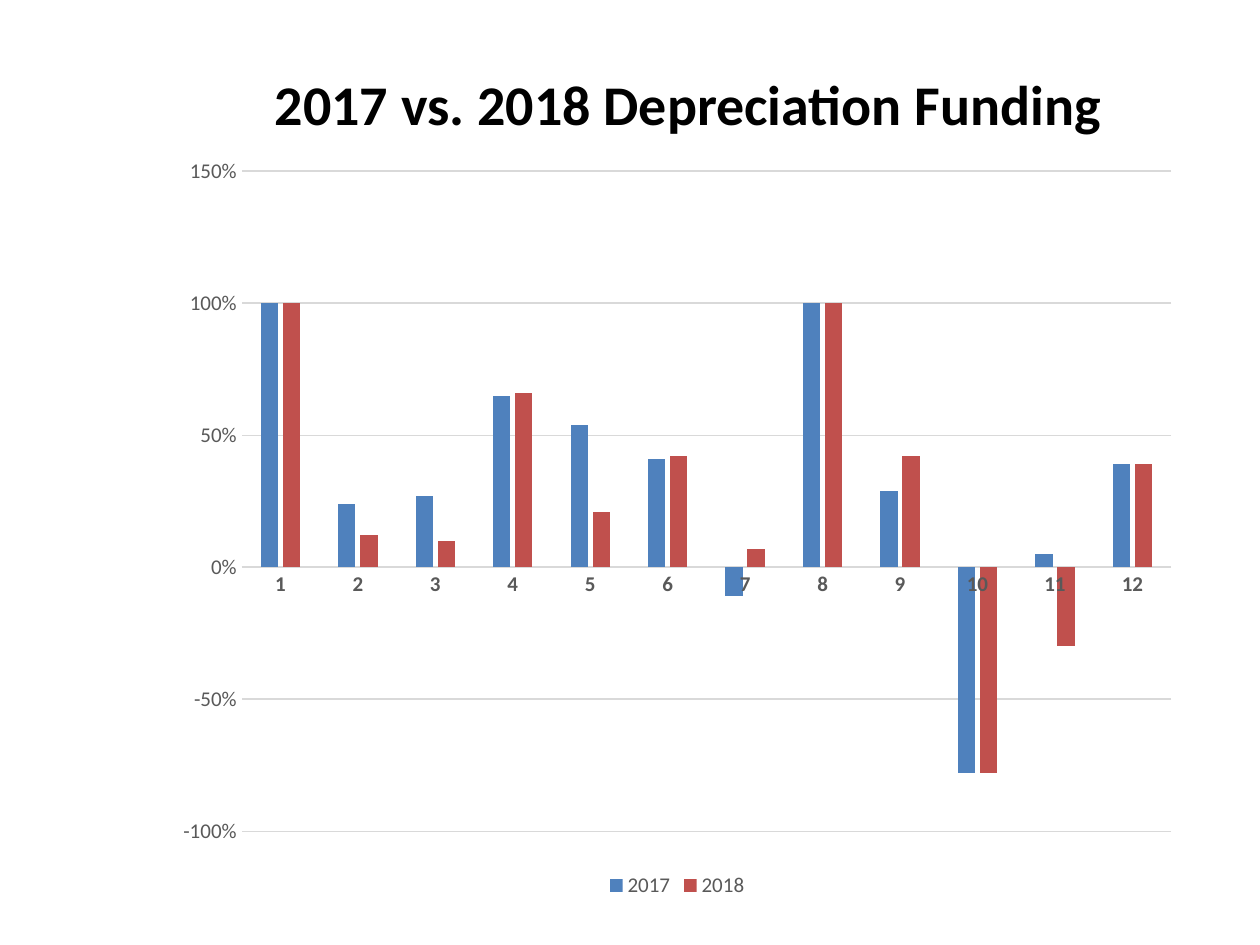
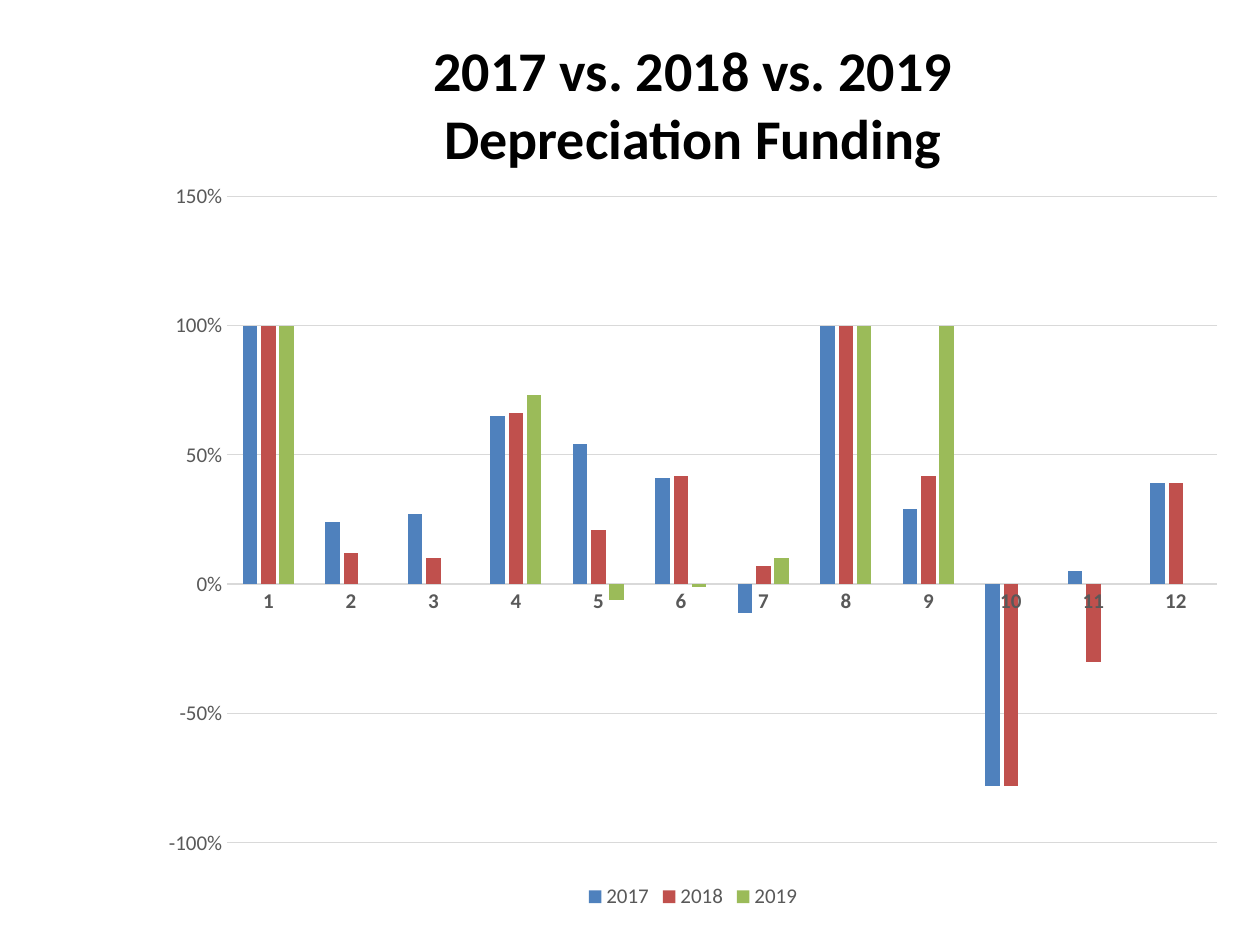
"""Two slides of column charts comparing depreciation funding by year."""
import pptx
import pptx.chart.data
import pptx.dml.color
import pptx.enum.chart
import pptx.enum.text
import pptx.util

Pt = pptx.util.Pt
RGBColor = pptx.dml.color.RGBColor
PP_ALIGN = pptx.enum.text.PP_ALIGN
XL = pptx.enum.chart

BLACK = RGBColor(0x00, 0x00, 0x00)
GRAY = RGBColor(0x59, 0x59, 0x59)
GRID = RGBColor(0xD9, 0xD9, 0xD9)
BLUE = RGBColor(0x4F, 0x81, 0xBD)
RED = RGBColor(0xC0, 0x50, 0x4D)
GREEN = RGBColor(0x9B, 0xBB, 0x59)
FONT = "Calibri"

FUNDING = {
    "2017": (BLUE, [1, 0.24, 0.27, 0.65, 0.54, 0.41, -0.11, 1, 0.29, -0.78, 0.05, 0.39]),
    "2018": (RED, [1, 0.12, 0.1, 0.66, 0.21, 0.42, 0.07, 1, 0.42, -0.78, -0.3, 0.39]),
    "2019": (GREEN, [1, None, None, 0.73, -0.06, -0.01, 0.1, 1, 1, None, None, None]),
}
SLIDES = [
    (["2017 vs. 2018 Depreciation Funding"], PP_ALIGN.LEFT,
     (150, 36, 510, 46), (93, 82, 588, 434), ["2017", "2018"]),
    (["2017 vs. 2018 vs. 2019", "Depreciation Funding"], PP_ALIGN.CENTER,
     (141, 17, 510, 85), (84, 96.5, 624, 426), ["2017", "2018", "2019"]),
]


def style_font(font, size, color, bold=False):
    font.name = FONT
    font.size = Pt(size)
    font.bold = bold
    font.color.rgb = color


prs = pptx.Presentation()
prs.slide_width = Pt(720)
prs.slide_height = Pt(540)

for title, align, title_box, chart_box, years in SLIDES:
    s = prs.slides.add_slide(prs.slide_layouts[6])

    tf = s.shapes.add_textbox(*map(Pt, title_box)).text_frame
    tf.word_wrap = True
    tf.text = "\n".join(title)
    for p in tf.paragraphs:
        p.alignment = align
        for r in p.runs:
            style_font(r.font, 32, BLACK, bold=True)

    data = pptx.chart.data.CategoryChartData(number_format="0%")
    data.categories = [str(n) for n in range(1, 13)]
    for year in years:
        data.add_series(year, FUNDING[year][1])
    chart = s.shapes.add_chart(
        XL.XL_CHART_TYPE.COLUMN_CLUSTERED, *map(Pt, chart_box), data).chart
    style_font(chart.font, 10, BLACK)
    chart.has_title = False

    plot = chart.plots[0]
    plot.vary_by_categories = False
    plot.gap_width = 219
    plot.overlap = -27
    for series in plot.series:
        series.invert_if_negative = False
        series.format.fill.solid()
        series.format.fill.fore_color.rgb = FUNDING[series.name][0]

    cat_axis = chart.category_axis
    cat_axis.format.line.color.rgb = GRID
    cat_axis.format.line.width = Pt(0.75)

    val_axis = chart.value_axis
    val_axis.minimum_scale = -1
    val_axis.maximum_scale = 1.5
    val_axis.major_unit = 0.5
    val_axis.format.line.fill.background()
    val_axis.major_gridlines.format.line.color.rgb = GRID
    val_axis.major_gridlines.format.line.width = Pt(0.75)
    val_axis.tick_labels.number_format = "0%"
    val_axis.tick_labels.number_format_is_linked = False

    for axis in (cat_axis, val_axis):
        axis.major_tick_mark = XL.XL_TICK_MARK.NONE
        axis.minor_tick_mark = XL.XL_TICK_MARK.NONE
        style_font(axis.tick_labels.font, 12, GRAY, bold=axis is cat_axis)

    chart.has_legend = True
    chart.legend.position = XL.XL_LEGEND_POSITION.BOTTOM
    chart.legend.include_in_layout = False
    style_font(chart.legend.font, 12, GRAY)

prs.save("out.pptx")
